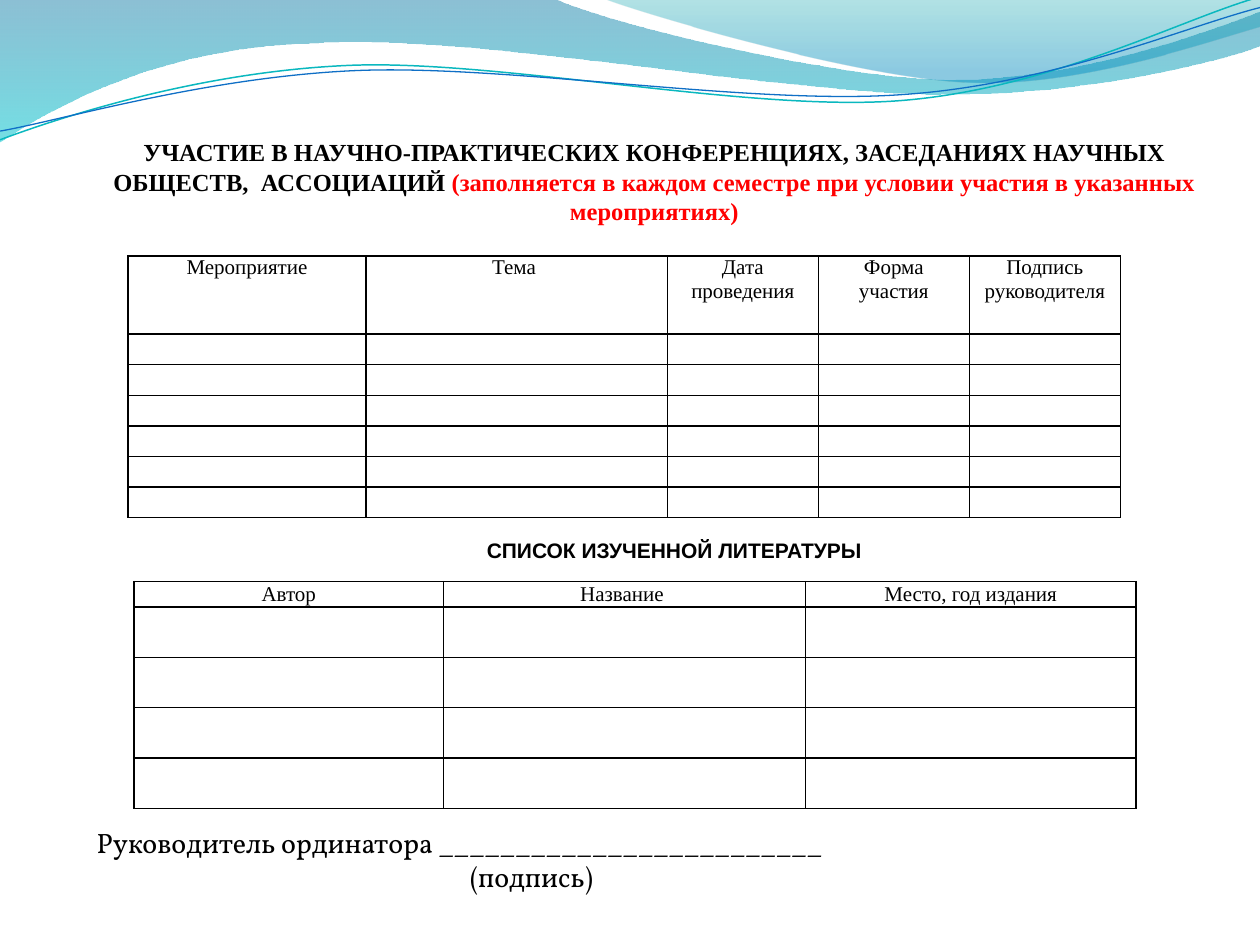
from dataclasses import dataclass

from lxml.etree import SubElement
from pptx import Presentation
from pptx.dml.color import RGBColor
from pptx.enum.text import MSO_ANCHOR, PP_ALIGN
from pptx.oxml.ns import qn
from pptx.util import Pt


@dataclass(frozen=True)
class Theme:
    ink: str = "000000"
    accent: str = "FF0000"
    wave_back: tuple = ((0, "0074A1", 45), (1, "00C6CF", 55))
    wave_front: tuple = ((0, "00A1A9", 30), (0.8, "008BBF", 45))
    teal: str = "0AB8BF"
    blue: str = "0F6FC6"
    serif: str = "Times New Roman"
    sans: str = "Arial"
    signature_font: str = "Vollkorn"
    title_size: int = 14
    table_size: int = 12
    signature_size: int = 16


THEME = Theme()
UNITS_PER_POINT = 100

WAVE_BACK = [
    (0, 0), (316.8, -0.7),
    (342.7, 12.2, 478.1, 45.4, 545.8, 45.4), (614.2, 45.4, 689.8, 18.7, 720, 6.5),
    (720.7, 25.9),
    (707.8, 31.7, 626.4, 54.7, 537.1, 54), (447.8, 54, 275, 20.2, 185, 24.5),
    (92.9, 25.9, 33.1, 59.8, -0.7, 81.4),
]
WAVE_FRONT = [
    (344.9, -0.7),
    (366.5, 7.9, 491, 44.6, 553.7, 46.8), (616.3, 49.7, 691.9, 23, 720, 15.1),
    (720, 0),
]
TEAL_LINE = [
    (0, 79.9), (34.6, 67, 113.8, 41, 199.4, 37.4),
    (284.4, 33.8, 427, 64.1, 513.4, 57.6), (599.8, 51.1, 675.4, 10.8, 718.6, -1.4),
]
BLUE_LINE = [
    (0, 74.9), (33.8, 69.1, 118.1, 43.9, 203.8, 40.3),
    (290.2, 36.7, 429.8, 60.5, 516.2, 54), (601.9, 48.2, 677.5, 15.1, 720, 4.3),
]


def apply_format(target, values):
    for name, value in values.items():
        setattr(target, name, value)


def add_outline(page, outline, close):
    points = [
        (segment[i] * UNITS_PER_POINT, segment[i + 1] * UNITS_PER_POINT)
        for segment in outline for i in range(0, len(segment), 2)
    ]
    builder = page.shapes.build_freeform(*points[0], scale=Pt(1) / UNITS_PER_POINT)
    builder.add_line_segments(points[1:], close=close)
    shape = builder.convert_to_shape()
    shape.shadow.inherit = False
    lines = iter(list(shape._element.iter(qn("a:lnTo"))))
    for segment in outline[1:]:
        first = next(lines)
        if len(segment) == 6:
            curve = first.makeelement(qn("a:cubicBezTo"))
            first.addprevious(curve)
            for line in (first, next(lines), next(lines)):
                curve.append(line[0])
                line.getparent().remove(line)
    return shape


def add_wave(page, outline, stops):
    shape = add_outline(page, outline, True)
    shape.fill.gradient()
    shape.fill.gradient_angle = 270
    for stop, (position, color, _) in zip(shape.fill.gradient_stops, stops):
        stop.position = position
        stop.color.rgb = RGBColor.from_string(color)
    shape.line.fill.background()
    tints = shape._element.spPr.iter(qn("a:srgbClr"))
    for tint, (_, _, opacity) in zip(tints, stops):
        SubElement(tint, qn("a:alpha"), val=str(opacity * 1000))


def add_wave_line(page, outline, color, width):
    shape = add_outline(page, outline, False)
    shape.fill.background()
    shape.line.color.rgb = RGBColor.from_string(color)
    shape.line.width = Pt(width)


def add_span(para, text, font, size, color=THEME.ink, bold=False):
    span = para.add_run()
    span.text = text
    apply_format(span.font, {"name": font, "size": Pt(size), "bold": bold})
    span.font.color.rgb = RGBColor.from_string(color)


def add_title(page, spans, left, top, width, height):
    box = page.shapes.title
    apply_format(box, {"left": Pt(left), "top": Pt(top),
                       "width": Pt(width), "height": Pt(height)})
    apply_format(box.text_frame, {"word_wrap": True, "vertical_anchor": MSO_ANCHOR.MIDDLE})
    para = box.text_frame.paragraphs[0]
    para.alignment = PP_ALIGN.CENTER
    for text, color in spans:
        add_span(para, text, THEME.serif, THEME.title_size, color, True)


def add_text(page, left, top, width, height, **frame_format):
    box = page.shapes.add_textbox(Pt(left), Pt(top), Pt(width), Pt(height))
    apply_format(box.text_frame, frame_format)
    return box.text_frame


def add_borders(cell):
    properties = cell._tc.get_or_add_tcPr()
    for side in ("L", "R", "T", "B"):
        line = SubElement(properties, qn(f"a:ln{side}"), w=str(Pt(1)))
        fill = SubElement(line, qn("a:solidFill"))
        SubElement(fill, qn("a:srgbClr"), val=THEME.ink)


def add_form_table(page, left, top, widths, heights, headers, anchor):
    frame = page.shapes.add_table(len(heights), len(widths), Pt(left), Pt(top),
                                  Pt(sum(widths)), Pt(sum(heights)))
    table = frame.table
    apply_format(table, {"first_row": False, "horz_banding": False})
    for column, width in zip(table.columns, widths):
        column.width = Pt(width)
    for row, height in zip(table.rows, heights):
        row.height = Pt(height)
    for cell in table.iter_cells():
        add_borders(cell)
        cell.fill.background()
        apply_format(cell, {"margin_left": Pt(5), "margin_right": Pt(5), "margin_top": 0,
                            "margin_bottom": 0, "vertical_anchor": anchor})
        SubElement(cell.text_frame.paragraphs[0]._p, qn("a:endParaRPr"),
                   sz=str(THEME.table_size * 100))
    for cell, header in zip(table.rows[0].cells, headers):
        para = cell.text_frame.paragraphs[0]
        para.alignment = PP_ALIGN.CENTER
        add_span(para, header, THEME.serif, THEME.table_size)


def add_signature(page):
    frame = add_text(page, 48.2, 468.3, 617.8, 46, word_wrap=True)
    label = frame.paragraphs[0]
    caption = frame.add_paragraph()
    caption._p.get_or_add_pPr().set("marL", str(Pt(213.3)))
    for para, text in ((label, "Руководитель ординатора " + "_" * 25),
                       (caption, "(подпись)")):
        add_span(para, text, THEME.signature_font, THEME.signature_size)


def main():
    deck = Presentation()
    apply_format(deck, {"slide_width": Pt(720), "slide_height": Pt(540)})
    page = deck.slides.add_slide(deck.slide_layouts[5])

    add_wave(page, WAVE_BACK, THEME.wave_back)
    add_wave(page, WAVE_FRONT, THEME.wave_front)
    add_wave_line(page, TEAL_LINE, THEME.teal, 0.85)
    add_wave_line(page, BLUE_LINE, THEME.blue, 0.75)

    add_title(page, [
        ("УЧАСТИЕ В НАУЧНО-ПРАКТИЧЕСКИХ КОНФЕРЕНЦИЯХ, ЗАСЕДАНИЯХ НАУЧНЫХ "
         "ОБЩЕСТВ,  АССОЦИАЦИЙ ", THEME.ink),
        ("(заполняется в каждом семестре при условии участия в указанных мероприятиях)",
         THEME.accent),
    ], 53.2, 74.5, 641.5, 58.3)
    add_form_table(page, 73.2, 146.3, [136, 172.2] + [86.3] * 3, [44.6] + [17.5] * 6,
                   ["Мероприятие", "Тема ", "Дата проведения", "Форма участия",
                    "Подпись руководителя"], MSO_ANCHOR.TOP)

    heading = add_text(page, 25.4, 296.6, 720, 36, word_wrap=False,
                       vertical_anchor=MSO_ANCHOR.MIDDLE).paragraphs[0]
    heading.alignment = PP_ALIGN.CENTER
    add_span(heading, "СПИСОК ИЗУЧЕННОЙ ЛИТЕРАТУРЫ", THEME.sans, THEME.table_size, bold=True)
    add_form_table(page, 76.6, 332.4, [176.9, 206.9, 188.8], [14.4] + [28.8] * 4,
                   ["Автор", "Название ", "Место, год издания"], MSO_ANCHOR.MIDDLE)
    add_signature(page)
    deck.save("out.pptx")


if __name__ == "__main__":
    main()
